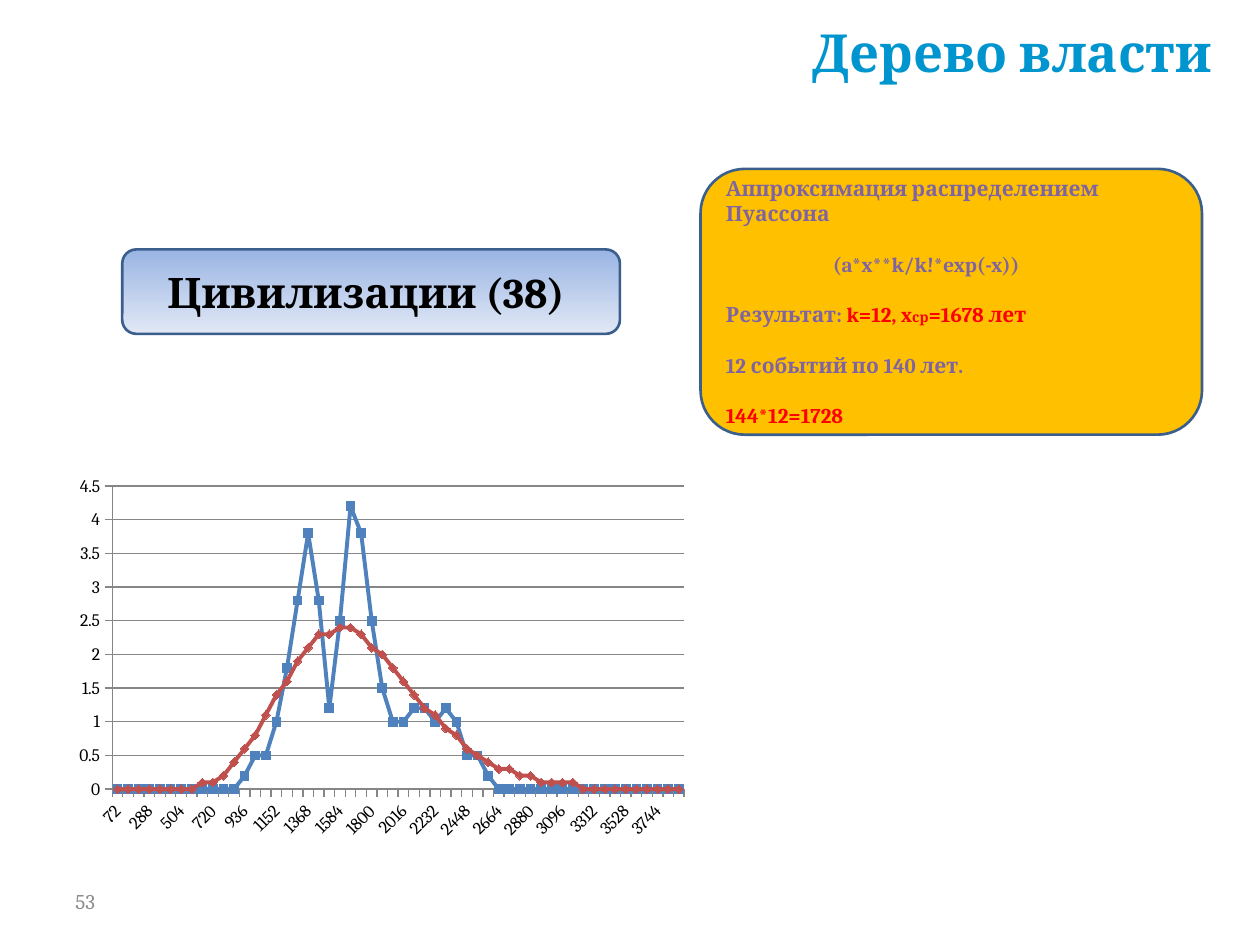
from pptx import Presentation
from pptx.chart.data import CategoryChartData
from pptx.dml.color import RGBColor
from pptx.enum.chart import XL_CHART_TYPE, XL_TICK_MARK
from pptx.enum.shapes import MSO_SHAPE
from pptx.enum.text import MSO_ANCHOR, PP_ALIGN
from pptx.util import Pt

PX = 9144  # 100 px to the inch
FONT = "Cambria"
ROUND = MSO_SHAPE.ROUNDED_RECTANGLE
LEFT, MID, RIGHT = PP_ALIGN.LEFT, PP_ALIGN.CENTER, PP_ALIGN.RIGHT
TOP, CENTER = MSO_ANCHOR.TOP, MSO_ANCHOR.MIDDLE
LINE, OUT = XL_CHART_TYPE.LINE, XL_TICK_MARK.OUTSIDE
HEX = {
    "title": "0095CE", "gray": "8C8C8C", "black": "000000",
    "edge": "3A5F8C", "light": "E1E8F5", "deep": "9AB5E4",
    "gold": "FFC000", "violet": "8064A2", "red": "FF0000",
    "blue": "4F81BD", "brick": "C0504D", "grid": "868686",
}
RGB = {name: RGBColor.from_string(code) for name, code in HEX.items()}


def put(shape, paras, align=LEFT, anchor=CENTER, gap=0, **insets):
    """Fill a shape with paragraphs, each an indent and (text, size, colour, bold) runs."""
    frame = shape.text_frame
    frame.word_wrap = True
    frame.vertical_anchor = anchor
    for side, inset in insets.items():
        setattr(frame, "margin_" + side, inset * PX)
    for i, (indent, runs) in enumerate(paras):
        para = frame.add_paragraph() if i else frame.paragraphs[0]
        para.alignment = align
        if i:
            para.space_before = Pt(gap)
        if indent:
            para._p.get_or_add_pPr().set("marL", str(indent * PX))
        for text, size, color, bold in runs:
            run = para.add_run()
            run.text = text
            look = {"name": FONT, "size": Pt(size), "bold": bold}
            for key, value in look.items():
                setattr(run.font, key, value)
            run.font.color.rgb = RGB[color]


def panel(*box):
    shape = slide.shapes.add_shape(ROUND, *(n * PX for n in box))
    shape.shadow.inherit = False
    shape.line.color.rgb = RGB["edge"]
    shape.line.width = Pt(1.5)
    return shape


deck = Presentation()
deck.slide_width, deck.slide_height = 1000 * PX, 750 * PX
slide = deck.slides.add_slide(deck.slide_layouts[6])

# Page number and title
number = slide.shapes.add_textbox(50 * PX, 695 * PX, 233 * PX, 40 * PX)
put(number, [(0, [("53", 12, "gray", False)])])
title = slide.shapes.add_textbox(66 * PX, 11 * PX, 906 * PX, 65 * PX)
put(title, [(0, [("Дерево власти", 30, "title", True)])], RIGHT, TOP, left=0)

# Topic panel
topic = panel(97, 198, 395, 67)
topic.fill.gradient()
topic.fill.gradient_angle = 270
for stop, shade in zip(topic.fill.gradient_stops, ("deep", "light")):
    stop.color.rgb = RGB[shade]
put(topic, [(0, [("Цивилизации (38)", 24, "black", True)])], MID, right=18)

# Result panel
result = panel(556, 134, 398, 211)
result.fill.solid()
result.fill.fore_color.rgb = RGB["gold"]
put(result, [
    (0, [("Аппроксимация распределением Пуассона", 12, "violet", True)]),
    (85, [("(a*x**k/k!*exp(-x))", 12, "violet", True)]),
    (0, [("Результат: ", 12, "violet", True), ("k=12, x", 12, "red", True),
         ("ср", 8, "red", True), ("=1678 лет", 12, "red", True)]),
    (0, [("12 событий по 140 лет.", 12, "violet", True)]),
    (0, [("144*12=1728", 12, "red", True)]),
], gap=14.4)

# Chart of observed counts and the fitted curve
counts = [0] * 12 + [
    0.2, 0.5, 0.5, 1, 1.8, 2.8, 3.8, 2.8, 1.2, 2.5, 4.2, 3.8, 2.5, 1.5,
    1, 1, 1.2, 1.2, 1, 1.2, 1, 0.5, 0.5, 0.2] + [0] * 18
curve = [0] * 8 + [
    0.1, 0.1, 0.2, 0.4, 0.6, 0.8, 1.1, 1.4, 1.6, 1.9, 2.1, 2.3, 2.3, 2.4,
    2.4, 2.3, 2.1, 2, 1.8, 1.6, 1.4, 1.2, 1.1, 0.9, 0.8, 0.6, 0.5, 0.4,
    0.3, 0.3, 0.2, 0.2, 0.1, 0.1, 0.1, 0.1] + [0] * 10
data = CategoryChartData()
data.categories = [str(year) for year in range(72, 3889, 72)]
data.add_series("Series 1", counts)
data.add_series("Series 2", curve)
chart = slide.shapes.add_chart(
    LINE, 53 * PX, 372 * PX, 500 * PX, 300 * PX, data).chart
chart.has_legend = chart.has_title = False
chart.font.name, chart.font.size = FONT, Pt(10)
chart.font.color.rgb = RGB["black"]
chart.plots[0].vary_by_categories = False
for series, color in zip(chart.plots[0].series, ("blue", "brick")):
    series.smooth = False
    series.marker.style = None
    series.format.line.color.rgb = RGB[color]
    series.format.line.width = Pt(2.25)

years, scale = chart.category_axis, chart.value_axis
limits = {"minimum_scale": 0, "maximum_scale": 4.5, "major_unit": 0.5,
          "has_major_gridlines": True}
for key, value in limits.items():
    setattr(scale, key, value)
for axis in (years, scale):
    axis.major_tick_mark = OUT
for part in (years, scale, scale.major_gridlines):
    part.format.line.color.rgb = RGB["grid"]
    part.format.line.width = Pt(0.75)

deck.save("out.pptx")
